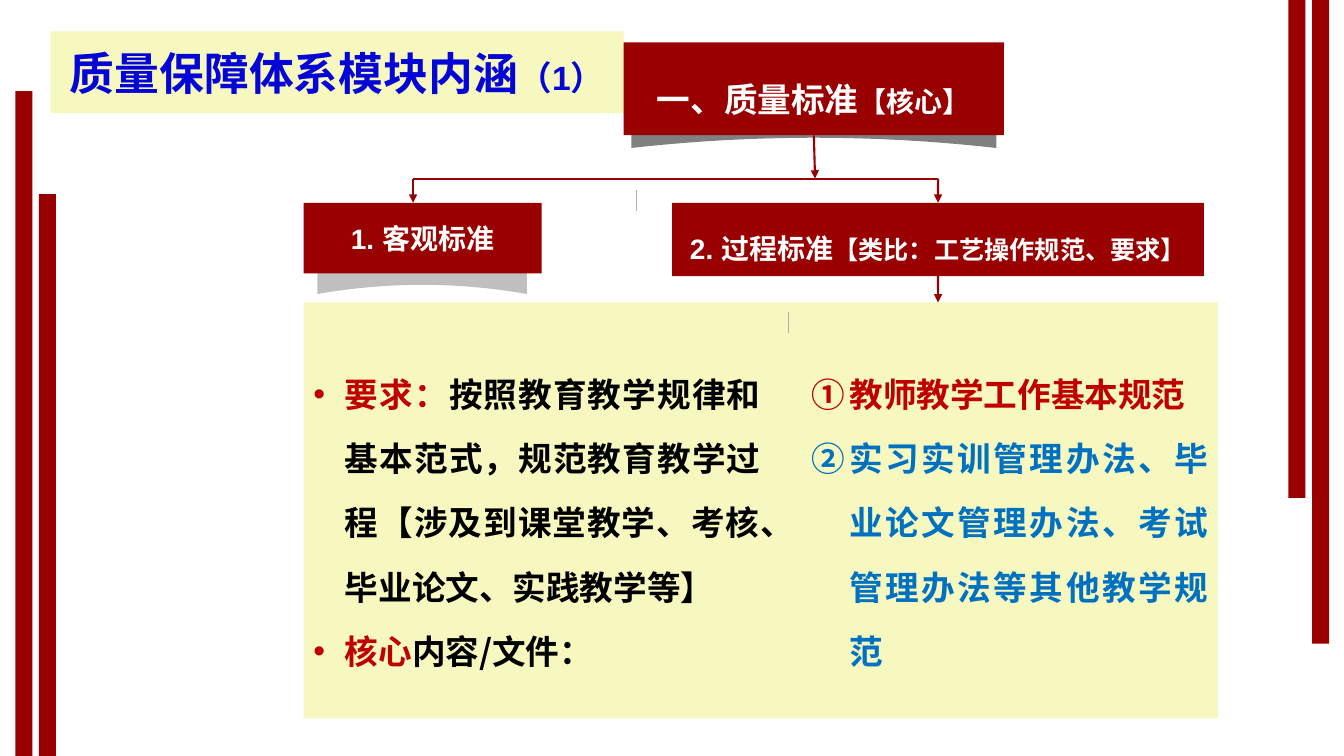
import lxml.etree
import pptx
import pptx.dml.color
import pptx.enum.shapes
import pptx.enum.text
import pptx.oxml.ns
import pptx.util

Cm = pptx.util.Cm
Pt = pptx.util.Pt
RGBColor = pptx.dml.color.RGBColor
qn = pptx.oxml.ns.qn
MSO_SHAPE = pptx.enum.shapes.MSO_SHAPE
PP_ALIGN = pptx.enum.text.PP_ALIGN

DEEP_RED = RGBColor(0x99, 0x00, 0x00)
ACCENT_RED = RGBColor(0xC0, 0x00, 0x00)
CREAM = RGBColor(0xF6, 0xF8, 0xBF)
TITLE_BLUE = RGBColor(0x05, 0x05, 0xD5)
LIST_BLUE = RGBColor(0x00, 0x70, 0xC0)
BLACK = RGBColor(0x00, 0x00, 0x00)
WHITE = RGBColor(0xFF, 0xFF, 0xFF)
DARK_GREY = RGBColor(0x80, 0x80, 0x80)
LIGHT_GREY = RGBColor(0xBF, 0xBF, 0xBF)
TICK_GREY = RGBColor(0xB0, 0xB0, 0xB0)
CJK_FONT = "Noto Sans CJK SC"


def add_text(paragraph, text, size=24, color=BLACK, font="Arial"):
    """Append one bold run in the given format."""
    run = paragraph.add_run()
    run.text = text
    run.font.size = Pt(size)
    run.font.bold = True
    run.font.name = font
    run.font.color.rgb = color
    east_asian = lxml.etree.Element(qn("a:ea"), typeface=CJK_FONT)
    run.font._element.find(qn("a:latin")).addnext(east_asian)


def paint(shape, color):
    """Give a shape a flat fill without line or shadow."""
    shape.shadow.inherit = False
    shape.fill.solid()
    shape.fill.fore_color.rgb = color
    shape.line.fill.background()


def place(placeholder, box):
    """Move a placeholder to its box, given in centimetres."""
    (placeholder.left, placeholder.top,
     placeholder.width, placeholder.height) = map(Cm, box)
    frame = placeholder.text_frame
    frame.word_wrap = True
    frame.auto_size = pptx.enum.text.MSO_AUTO_SIZE.NONE
    frame.vertical_anchor = pptx.enum.text.MSO_ANCHOR.MIDDLE
    return frame


def add_side_bars(slide, box):
    """Draw the red bars along both edges of the box."""
    left, top, width, height = box
    bars = [(0.39, 2.3, height - 2.3), (0.98, 4.89, height - 4.89),
            (width - 1.4, 0, 12.55), (width - 0.8, 0, 16.22)]
    for x, y, length in bars:
        bar = slide.shapes.add_shape(
            MSO_SHAPE.RECTANGLE, Cm(left + x), Cm(top + y), Cm(0.43), Cm(length))
        paint(bar, DEEP_RED)


def fill_title(title, box):
    """Set the slide title on a rounded cream panel."""
    frame = place(title, box)
    properties = title._element.spPr
    geometry = lxml.etree.Element(qn("a:prstGeom"), prst="roundRect")
    lxml.etree.SubElement(geometry, qn("a:avLst"))
    properties.find(qn("a:xfrm")).addnext(geometry)
    paint(title, CREAM)
    heading = frame.paragraphs[0]
    heading.alignment = PP_ALIGN.CENTER
    add_text(heading, "质量保障体系模块内涵", size=32, color=TITLE_BLUE)
    add_text(heading, "（1）", color=TITLE_BLUE)


def fill_requirements(body, box):
    """Fill the two-column list of requirements and documents."""
    frame = place(body, box)
    paint(body, CREAM)
    frame.margin_left = frame.margin_right = Cm(0.25)
    frame.margin_top = frame.margin_bottom = Cm(1)
    frame._txBody.bodyPr.set("numCol", "2")
    items = [
        (0, [("要求：", ACCENT_RED),
             ("按照教育教学规律和基本范式，规范教育教学过程"
              "【涉及到课堂教学、考核、毕业论文、实践教学等】", BLACK)]),
        (0, [("核心", ACCENT_RED), ("内容/文件：", BLACK)]),
        (1, [("教师教学工作基本规范", ACCENT_RED)]),
        (1, [("实习实训管理办法、毕业论文管理办法、考试管理办法等其他教学规范",
              LIST_BLUE)]),
    ]
    for index, (level, parts) in enumerate(items):
        item = frame.add_paragraph() if index else frame.paragraphs[0]
        item.level = level
        item.alignment = PP_ALIGN.JUSTIFY
        item.line_spacing = Pt(46)
        item.space_before = item.space_after = Pt(0)
        indent, hanging = [(0.79, 0.79), (2.24, 0.97)][level]
        properties = item._p.get_or_add_pPr()
        properties.set("marL", str(Cm(indent)))
        properties.set("indent", str(-Cm(hanging)))
        if level:
            lxml.etree.SubElement(
                properties, qn("a:buAutoNum"), type="circleNumDbPlain")
        else:
            lxml.etree.SubElement(properties, qn("a:buFont"), typeface="Arial")
            lxml.etree.SubElement(properties, qn("a:buChar"), char="•")
        for text, color in parts:
            add_text(item, text, color=color, font=CJK_FONT)


def add_curled_shadow(slide, box, color):
    """Draw a band with a peaked top and an arched lower edge."""
    left, top, width, height = box
    steps = [step / 10 for step in range(10, -11, -1)]
    arch = [((1 + u) / 2, 1 - 0.29 * (1 - u * u)) for u in steps]
    outline = arch + [(0, 0.24), (0.5, 0), (1, 0.24)]
    points = [(Cm(left + x * width), Cm(top + y * height)) for x, y in outline]
    builder = slide.shapes.build_freeform(*points[0])
    builder.add_line_segments(points[1:], close=True)
    paint(builder.convert_to_shape(), color)


def add_standard(slide, box, parts, line_spacing=None):
    """Draw a red box with its white label and return it."""
    standard = slide.shapes.add_shape(MSO_SHAPE.RECTANGLE, *map(Cm, box))
    paint(standard, DEEP_RED)
    label = standard.text_frame.paragraphs[0]
    label.alignment = PP_ALIGN.CENTER
    if line_spacing:
        label.line_spacing = line_spacing
        label.space_after = Pt(6)
    for text, size in parts:
        add_text(label, text, size=size, color=WHITE)
    return standard


def add_line(slide, start, end, color=DEEP_RED, width=1.5, arrow=False):
    """Draw a straight line, with an arrowhead at its end if asked."""
    line = slide.shapes.add_connector(
        pptx.enum.shapes.MSO_CONNECTOR.STRAIGHT, *map(Cm, start + end))
    line.line.color.rgb = color
    line.line.width = Pt(width)
    if arrow:
        lxml.etree.SubElement(
            line.line._get_or_add_ln(), qn("a:tailEnd"), type="triangle")
    lxml.etree.SubElement(line._element.spPr, qn("a:effectLst"))
    return line


def add_standards_tree(slide, box):
    """Draw the core standard, its two branches and their connectors."""
    left, top, width, height = box
    branch_top, rail = top + 4.04, top + 3.43
    objective_x, process_x, core_x = left + 2.76, left + 15.99, left + 12.86

    add_curled_shadow(slide, (left + 0.35, top + 5.54, 5.28, 0.8), LIGHT_GREY)
    add_standard(slide, (left, branch_top, 6, 1.78), [("1. 客观标准", 20)])
    process = add_standard(
        slide, (left + 9.29, branch_top, 13.4, 1.85),
        [("2. 过程标准", 20), ("【类比：工艺操作规范、要求】", 18)], 1.5)
    add_curled_shadow(slide, (left + 8.26, top + 1.77, 9.2, 0.89), DARK_GREY)
    core = add_standard(
        slide, (left + 8.07, top, 9.58, 2.34),
        [("一、质量标准", 24), ("【核心】", 20)], 1.5)

    for x, y in [(8.38, 3.71), (12.21, 6.78)]:
        add_line(slide, (left + x, top + y), (left + x, top + y + 0.53),
                 color=TICK_GREY, width=0.5)
    add_line(slide, (objective_x, rail), (process_x, rail))
    add_line(slide, (objective_x, rail), (objective_x, branch_top), arrow=True)
    to_process = add_line(
        slide, (process_x, rail), (process_x, branch_top), arrow=True)
    to_process.end_connect(process, 0)
    to_list = add_line(slide, (process_x, branch_top + 1.85),
                       (process_x, top + height), arrow=True)
    to_list.begin_connect(process, 2)
    from_core = add_line(
        slide, (core_x, top + 2.34), (core_x + 0.03, rail), arrow=True)
    from_core.begin_connect(core, 2)


def main():
    """Build the slide and save it."""
    deck = pptx.Presentation()
    deck.slide_width, deck.slide_height = Cm(33.87), Cm(19.05)
    slide = deck.slides.add_slide(deck.slide_layouts[1])
    fill_requirements(slide.placeholders[1], (7.65, 7.62, 23.04, 10.48))
    fill_title(slide.shapes.title, (1.27, 0.79, 14.45, 2.06))
    add_side_bars(slide, (0, 0, 33.87, 19.05))
    add_standards_tree(slide, (7.65, 1.07, 23.04, 6.55))
    deck.save("out.pptx")


if __name__ == "__main__":
    main()
